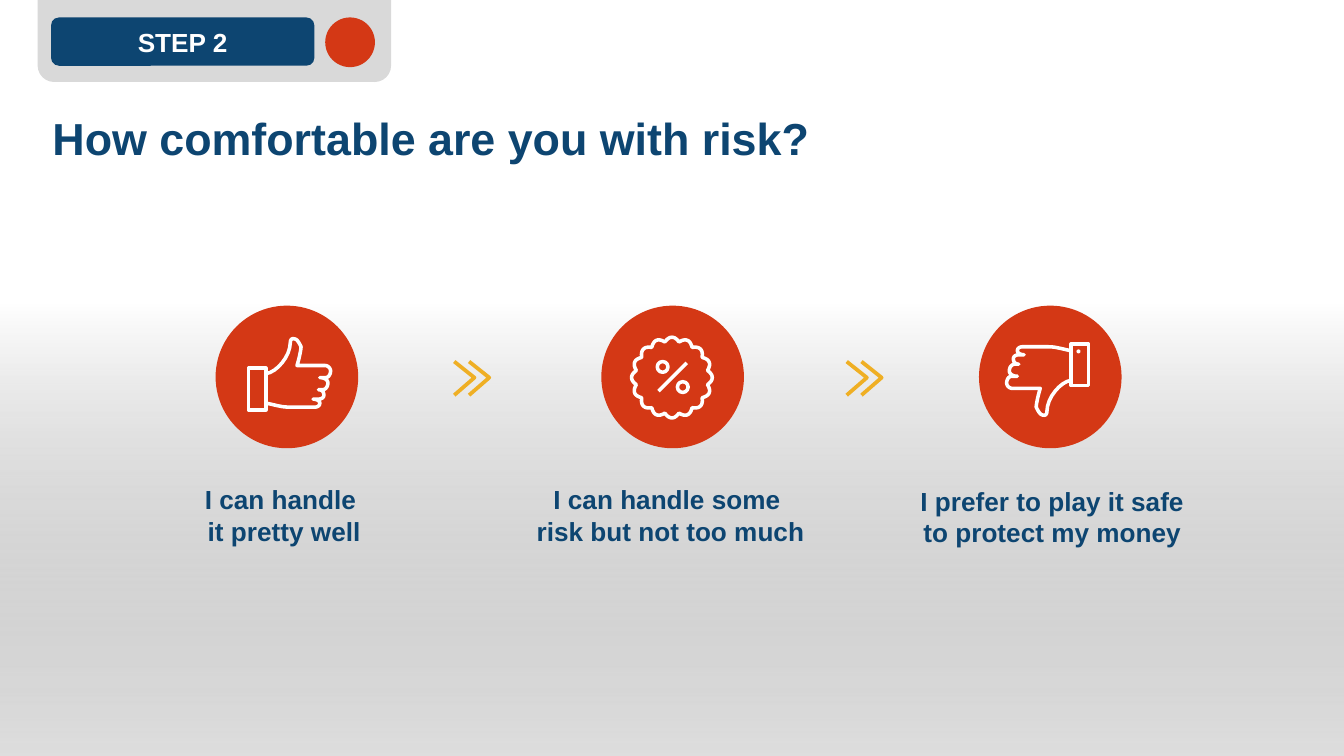
from math import cos, pi, sin

from lxml import etree
from pptx import Presentation
from pptx.dml.color import RGBColor
from pptx.enum.shapes import MSO_CONNECTOR, MSO_SHAPE
from pptx.enum.text import MSO_ANCHOR, PP_ALIGN
from pptx.oxml.ns import qn
from pptx.util import Inches, Pt

NAVY = RGBColor(0x0D, 0x45, 0x71)
RED = RGBColor(0xD4, 0x38, 0x15)
GOLD = RGBColor(0xEF, 0xAF, 0x24)
PANEL_GRAY = RGBColor(0xD9, 0xD9, 0xD9)
SHADE_GRAY = RGBColor(0x80, 0x80, 0x80)
WHITE = RGBColor(0xFF, 0xFF, 0xFF)
RECT, OVAL = MSO_SHAPE.RECTANGLE, MSO_SHAPE.OVAL
ROUNDED, TAB = MSO_SHAPE.ROUNDED_RECTANGLE, MSO_SHAPE.ROUND_2_SAME_RECTANGLE
STRAIGHT = MSO_CONNECTOR.STRAIGHT
CENTER, LEFT = PP_ALIGN.CENTER, PP_ALIGN.LEFT
TOP = MSO_ANCHOR.TOP
ICON_LINE = Pt(1.9)

prs = Presentation()
prs.slide_width = Inches(10)
prs.slide_height = prs.slide_width * 9 // 16
slide = prs.slides.add_slide(prs.slide_layouts[5])
shapes = slide.shapes


def add_figure(kind, left, top, width, height, fill=None, line=None):
    figure = shapes.add_shape(kind, Inches(left), Inches(top), Inches(width), Inches(height))
    figure.shadow.inherit = False
    if fill is None:
        figure.fill.background()
    else:
        figure.fill.solid()
        figure.fill.fore_color.rgb = fill
    if line is None:
        figure.line.fill.background()
    else:
        figure.line.color.rgb = line
        figure.line.width = ICON_LINE
    return figure


def add_stroke(points, color, width, close=False):
    points = [(Inches(x), Inches(y)) for x, y in points]
    builder = shapes.build_freeform(*points[0])
    builder.add_line_segments(points[1:], close=close)
    stroke = builder.convert_to_shape()
    stroke.shadow.inherit = False
    stroke.fill.background()
    stroke.line.color.rgb = color
    stroke.line.width = width


backdrop = add_figure(RECT, 0, 0, 10.01, 5.64)
backdrop.fill.gradient()
backdrop.fill.gradient_angle = 90
shade, clear = backdrop.fill.gradient_stops
shade.position, shade.color.rgb = 0, SHADE_GRAY
clear.position, clear.color.rgb = 0.6, WHITE
shade_color = next(backdrop._element.iter(qn("a:srgbClr")))
etree.SubElement(shade_color, qn("a:alpha")).set("val", "25000")
shapes._spTree.insert(2, backdrop._element)

title = shapes.title
title.left, title.top = Inches(0.29), Inches(0.77)
title.width, title.height = Inches(6.24), Inches(0.5)
title.text_frame.text = "How comfortable are you with risk?"
title.text_frame.vertical_anchor = TOP

step_tab = add_figure(TAB, 0.28, 0, 2.63, 0.61, PANEL_GRAY)
step_tab.rotation = 180
step_tab.adjustments[0] = 0.2
step_label = add_figure(ROUNDED, 0.38, 0.13, 1.96, 0.36, NAVY)
step_label.text_frame.text = "STEP 2"
add_figure(OVAL, 2.42, 0.13, 0.37, 0.37, RED)

styled = [(title, LEFT, 24, NAVY), (step_label, CENTER, 14, WHITE)]
for caption, left, top, width in (
    ("I can handle \nit pretty well", 0.95, 3.55, 2.33),
    ("I can handle some \nrisk but not too much", 3.83, 3.55, 2.32),
    ("I prefer to play it safe to protect my money", 6.71, 3.56, 2.24),
):
    answer = shapes.add_textbox(Inches(left), Inches(top), Inches(width), Inches(0.57))
    answer.text_frame.word_wrap = True
    answer.text_frame.paragraphs[0].text = caption
    styled.append((answer, CENTER, 14, NAVY))

for holder, alignment, size, color in styled:
    paragraph = holder.text_frame.paragraphs[0]
    paragraph.alignment = alignment
    paragraph.font.name = "Arial"
    paragraph.font.size = Pt(size)
    paragraph.font.bold = True
    paragraph.font.color.rgb = color

for pair_left in (3.38, 6.3):
    for left in (pair_left, pair_left + 0.11):
        add_stroke([(left, 2.94), (left + 0.15, 2.81), (left, 2.69)], GOLD, Pt(2))

for left in (1.62, 4.49, 7.3):
    disc = add_figure(OVAL, left, 2.29, 1.03, 1.03, RED, RED)
    disc.line.width = Pt(2.25)

hand_curves = [
    (2.06, 2.77, 2.16, 2.65, 2.16, 2.55),
    (2.16, 2.53, 2.17, 2.52, 2.18, 2.52),
    (2.21, 2.52, 2.22, 2.54, 2.24, 2.58),
    (2.24, 2.61, 2.22, 2.69, 2.21, 2.72),
    (2.42, 2.72),
    (2.44, 2.72, 2.46, 2.74, 2.46, 2.76),
    (2.46, 2.78, 2.45, 2.81, 2.42, 2.81),
    (2.38, 2.81),
    (2.42, 2.81, 2.44, 2.83, 2.44, 2.85),
    (2.44, 2.88, 2.42, 2.9, 2.4, 2.9),
    (2.37, 2.9),
    (2.4, 2.9, 2.41, 2.92, 2.41, 2.94),
    (2.41, 2.96, 2.39, 2.97, 2.37, 2.97),
    (2.33, 2.97),
    (2.35, 2.97, 2.38, 2.98, 2.38, 3),
    (2.38, 3.02, 2.36, 3.03, 2.34, 3.03),
    (2.17, 3.03),
    (2.09, 3.03, 2.08, 3.02, 1.98, 3),
]
hand = [(1.98, 2.78)]
for curve in hand_curves:
    if len(curve) == 2:
        hand.append(curve)
        continue
    x0, y0 = hand[-1]
    x1, y1, x2, y2, x3, y3 = curve
    for step in range(1, 9):
        t = step / 8
        a, b, c, d = (1 - t) ** 3, 3 * t * (1 - t) ** 2, 3 * t * t * (1 - t), t ** 3
        hand.append((a * x0 + b * x1 + c * x2 + d * x3, a * y0 + b * y1 + c * y2 + d * y3))

add_stroke(hand, WHITE, ICON_LINE)
add_stroke([(9.95 - x, 5.61 - y) for x, y in hand], WHITE, ICON_LINE)
for left, top in ((1.85, 2.74), (7.97, 2.56)):
    add_figure(RECT, left, top, 0.13, 0.31, line=WHITE)
add_figure(OVAL, 8.01, 2.6, 0.03, 0.03, WHITE)

badge = []
for step in range(256):
    angle = 2 * pi * step / 256
    radius = 0.27 + 0.03 * abs(cos(8 * angle))
    badge.append((5 + radius * sin(angle), 2.81 - radius * cos(angle)))
add_stroke(badge, WHITE, ICON_LINE, close=True)
for left, top in ((4.89, 2.69), (5.04, 2.84)):
    add_figure(OVAL, left, top, 0.08, 0.08, line=WHITE)
slash = shapes.add_connector(STRAIGHT, Inches(4.9), Inches(2.91), Inches(5.11), Inches(2.7))
slash.line.color.rgb = WHITE
slash.line.width = ICON_LINE
etree.SubElement(slash._element.spPr, qn("a:effectLst"))

prs.save("out.pptx")
